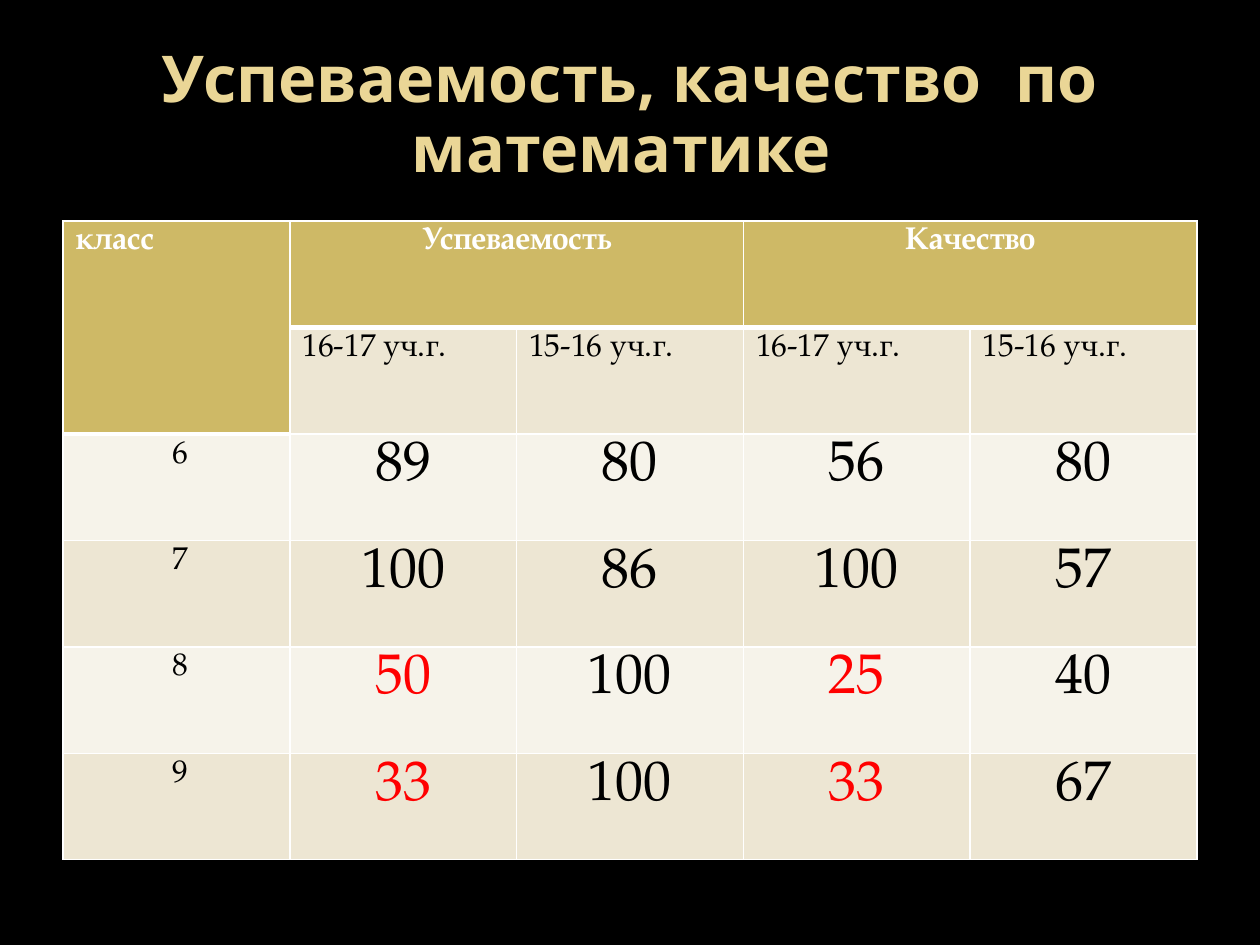
from dataclasses import dataclass

from lxml.etree import SubElement
from pptx import Presentation
from pptx.dml.color import RGBColor
from pptx.enum.text import MSO_ANCHOR, PP_ALIGN
from pptx.oxml.ns import qn
from pptx.util import Emu, Pt

PX = 914400 / 126
BLACK = RGBColor(0x00, 0x00, 0x00)
WHITE = RGBColor(0xFF, 0xFF, 0xFF)
RED = RGBColor(0xFF, 0x00, 0x00)
SAND = RGBColor(0xEA, 0xD6, 0x96)
GOLD = RGBColor(0xCE, 0xB9, 0x66)
BAND_DARK = RGBColor(0xED, 0xE6, 0xD3)
BAND_LIGHT = RGBColor(0xF6, 0xF3, 0xEA)
TITLE_FONT = "Noto Sans"
TABLE_FONT = "TeX Gyre Pagella"
YEARS = ("16-17 уч.г.", "15-16 уч.г.")
RESULTS = {
    6: (89, 80, 56, 80),
    7: (100, 86, 100, 57),
    8: (50, 100, 25, 40),
    9: (33, 100, 33, 67),
}
LOW_RESULT = 50
ROWS, COLS = 6, 5


@dataclass(frozen=True)
class Style:
    size: float
    color: RGBColor
    font: str = TABLE_FONT
    bold: bool = False
    align: PP_ALIGN = PP_ALIGN.CENTER


HEADING = Style(18, WHITE, bold=True)
CORNER = Style(18, WHITE, bold=True, align=PP_ALIGN.LEFT)
YEAR = Style(18, BLACK, align=PP_ALIGN.LEFT)
GRADE = Style(18, BLACK)
RESULT = Style(32, BLACK)
LOW = Style(32, RED)
TITLE = Style(36.9, SAND, TITLE_FONT, bold=True)


def px(n: int) -> Emu:
    return Emu(round(n * PX))


def write(tf, text: str, style: Style) -> None:
    p = tf.paragraphs[0]
    p.alignment = style.align
    r = p.add_run()
    r.text = text
    r.font.name = style.font
    r.font.size = Pt(style.size)
    r.font.bold = style.bold
    r.font.color.rgb = style.color


def is_heading(row: int, col: int) -> bool:
    return row == 0 or (row == 1 and col == 0)


def draw_borders(cell, row: int, col: int) -> None:
    """White grid, with a thick line under the gold headings."""
    under_heading = row > 0 and is_heading(row - 1, col) and not is_heading(row, col)
    top = 3 if under_heading else 1
    bottom = 3 if is_heading(row, col) else 1
    tcPr = cell._tc.get_or_add_tcPr()
    for side, width in (("L", 1), ("R", 1), ("T", top), ("B", bottom)):
        ln = SubElement(tcPr, qn(f"a:ln{side}"), w=str(Pt(width)))
        fill = SubElement(ln, qn("a:solidFill"))
        SubElement(fill, qn("a:srgbClr"), val=str(WHITE))


def add_title(s, text: str) -> None:
    tf = s.shapes.add_textbox(px(63), px(38), px(1134), px(157)).text_frame
    tf.word_wrap = True
    tf.vertical_anchor = MSO_ANCHOR.MIDDLE
    write(tf, text, TITLE)
    tf.paragraphs[0].line_spacing = 0.9


def add_results_table(s) -> None:
    frame = s.shapes.add_table(ROWS, COLS, px(63), px(221), px(1134), px(639))
    table = frame.table
    table.first_row = table.horz_banding = False
    for row in range(ROWS):
        for col in range(COLS):
            cell = table.cell(row, col)
            draw_borders(cell, row, col)
            cell.fill.solid()
            band = BAND_DARK if row % 2 else BAND_LIGHT
            cell.fill.fore_color.rgb = GOLD if is_heading(row, col) else band

    table.cell(0, 0).merge(table.cell(1, 0))
    write(table.cell(0, 0).text_frame, "класс", CORNER)
    for col, heading in ((1, "Успеваемость"), (3, "Качество")):
        table.cell(0, col).merge(table.cell(0, col + 1))
        write(table.cell(0, col).text_frame, heading, HEADING)
        for i, year in enumerate(YEARS):
            write(table.cell(1, col + i).text_frame, year, YEAR)

    for row, (grade, values) in enumerate(RESULTS.items(), start=2):
        write(table.cell(row, 0).text_frame, f" {grade}", GRADE)
        for col, value in enumerate(values, start=1):
            # Only the current year's columns (odd ones) are flagged
            low = col % 2 == 1 and value <= LOW_RESULT
            write(table.cell(row, col).text_frame, str(value), LOW if low else RESULT)


def main() -> None:
    prs = Presentation()
    prs.slide_width, prs.slide_height = px(1260), px(945)
    s = prs.slides.add_slide(prs.slide_layouts[6])
    s.background.fill.solid()
    s.background.fill.fore_color.rgb = BLACK
    add_title(s, "Успеваемость, качество  по математике ")
    add_results_table(s)
    prs.save("out.pptx")


if __name__ == "__main__":
    main()
